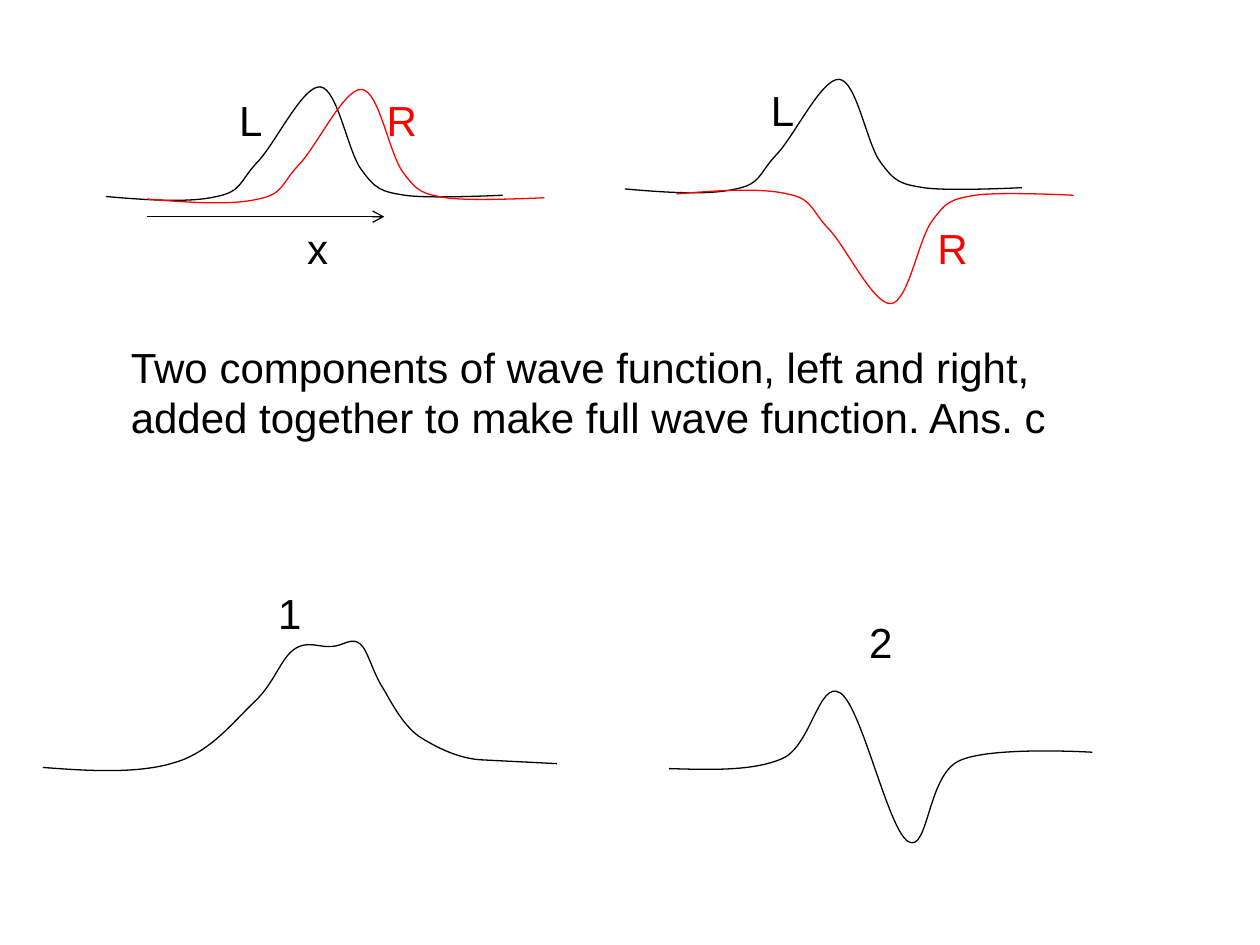
from collections import namedtuple
from dataclasses import dataclass
from math import cos, radians, sin

from pptx import Presentation
from pptx.dml.color import RGBColor
from pptx.enum.shapes import MSO_CONNECTOR
from pptx.enum.text import MSO_AUTO_SIZE
from pptx.oxml.ns import qn
from pptx.oxml.xmlchemy import OxmlElement
from pptx.util import Inches, Pt


@dataclass(frozen=True)
class Theme:
    black: RGBColor = RGBColor(0, 0, 0)
    red: RGBColor = RGBColor(255, 0, 0)
    font: str = "Arial"
    size: Pt = Pt(24)
    stroke: Pt = Pt(0.75)


THEME = Theme()
Box = namedtuple("Box", "left top width height")

PULSE_HEIGHT = 0.93
PULSE = [
    (0, 0.88), (0.34, 0.91), (0.67, 0.93), (0.88, 0.88),
    (1.08, 0.84), (1.06, 0.76), (1.2, 0.61),
    (1.34, 0.47), (1.56, 0), (1.7, 0.01),
    (1.84, 0.02), (1.92, 0.53), (2.03, 0.67),
    (2.14, 0.82), (2.18, 0.84), (2.37, 0.87),
    (2.56, 0.9), (3.15, 0.87), (3.15, 0.87),
]
FLIPPED_PULSE = [(x, PULSE_HEIGHT - y) for x, y in PULSE]
SUM_WAVE = [
    (0, 1.04), (0.38, 1.07), (0.77, 1.09), (1.05, 1),
    (1.33, 0.92), (1.52, 0.67), (1.68, 0.52),
    (1.84, 0.37), (1.89, 0.17), (2, 0.1),
    (2.1, 0.03), (2.2, 0.09), (2.29, 0.08),
    (2.38, 0.08), (2.45, 0), (2.52, 0.06),
    (2.58, 0.11), (2.62, 0.29), (2.7, 0.41),
    (2.77, 0.53), (2.85, 0.69), (2.98, 0.79),
    (3.12, 0.88), (3.3, 0.97), (3.48, 0.98),
    (3.68, 0.99), (3.88, 1), (4.08, 1.01),
]
DIFFERENCE_WAVE = [
    (0, 0.71), (0.34, 0.72), (0.67, 0.73), (0.9, 0.63),
    (1.13, 0.53), (1.19, 0), (1.36, 0.11),
    (1.53, 0.22), (1.74, 1.2), (1.9, 1.29),
    (2.06, 1.38), (2.05, 0.77), (2.3, 0.65),
    (2.54, 0.53), (3.36, 0.58), (3.36, 0.58),
]


def turn(points, center, degrees):
    angle = radians(degrees)
    turned = []
    for x, y in points:
        dx, dy = x - center[0], y - center[1]
        turned.append((center[0] + dx * cos(angle) - dy * sin(angle),
                       center[1] + dx * sin(angle) + dy * cos(angle)))
    return turned


def add_curve(page, left, top, points, color=THEME.black, rotation=0):
    spots = [(Inches(left + x), Inches(top + y)) for x, y in points]
    builder = page.shapes.build_freeform(*spots[0])
    builder.add_line_segments(spots[1:], close=False)
    curve = builder.convert_to_shape()
    outline = curve.element.find(".//" + qn("a:path"))
    segments = outline.findall(qn("a:lnTo"))
    for start in range(0, len(segments), 3):
        bezier = OxmlElement("a:cubicBezTo")
        for segment in segments[start:start + 3]:
            bezier.append(segment[0])
            outline.remove(segment)
        outline.append(bezier)
    curve.shadow.inherit = False
    curve.fill.background()
    curve.line.color.rgb = color
    curve.line.width = THEME.stroke
    curve.rotation = rotation


def add_text(page, box, lines, color=THEME.black, wrap=False):
    frame = page.shapes.add_textbox(*map(Inches, box)).text_frame
    frame.word_wrap = wrap
    frame.auto_size = MSO_AUTO_SIZE.NONE if wrap else MSO_AUTO_SIZE.SHAPE_TO_FIT_TEXT
    for index, line in enumerate(lines):
        para = frame.paragraphs[0] if index == 0 else frame.add_paragraph()
        para.text = line
        para.font.name = THEME.font
        para.font.size = THEME.size
        para.font.color.rgb = color


def add_label(page, left, top, text, color=THEME.black, width=0.39):
    add_text(page, Box(left, top, width, 0.5), [text], color)


def add_axis(page, left, top, length):
    axis = page.shapes.add_connector(
        MSO_CONNECTOR.STRAIGHT, Inches(left), Inches(top),
        Inches(left + length), Inches(top))
    axis.line.color.rgb = THEME.black
    axis.line.width = THEME.stroke
    tail = OxmlElement("a:tailEnd")
    tail.set("type", "arrow")
    axis.line._get_or_add_ln().append(tail)
    axis.element.spPr.append(OxmlElement("a:effectLst"))


def draw_in_phase(page, box):
    left, top = box.left, box.top
    add_curve(page, left, top, PULSE)
    add_curve(page, left + 0.33, top + 0.02, PULSE, THEME.red)
    add_label(page, left + 2.13, top + 0.02, "R", THEME.red, 0.45)
    add_label(page, left + 0.96, top + 0.02, "L")
    add_axis(page, left + 0.33, top + 1.04, 1.88)
    add_label(page, left + 1.5, top + 1.04, "x", width=0.37)


def draw_out_of_phase(page, box):
    left, top = box.left, box.top
    add_curve(page, left, top, PULSE)
    add_curve(page, left + 0.41, top + 0.87, FLIPPED_PULSE, THEME.red)
    add_label(page, left + 2.38, top + 1.1, "R", THEME.red, 0.45)
    add_label(page, left + 1.06, top, "L")


def draw_sum(page, box):
    tilt = -3.7
    level = turn(SUM_WAVE, (2, 0.58), -tilt)
    add_curve(page, box.left, box.top + 0.44, level, rotation=tilt)
    add_label(page, box.left + 1.77, box.top, "1")


def draw_difference(page, box):
    add_curve(page, box.left, box.top + 0.55, DIFFERENCE_WAVE)
    add_label(page, box.left + 1.49, box.top, "2")


def draw_caption(page, box):
    add_text(page, box, [
        "Two components of wave function, left and right,",
        "added together to make full wave function. Ans. c",
    ], wrap=True)


def main():
    deck = Presentation()
    deck.slide_width, deck.slide_height = Inches(10), Inches(7.5)
    page = deck.slides.add_slide(deck.slide_layouts[6])
    draw_in_phase(page, Box(0.84, 0.68, 3.48, 1.54))
    draw_out_of_phase(page, Box(4.96, 0.62, 3.56, 1.8))
    draw_caption(page, Box(0.94, 2.66, 7.54, 1.31))
    draw_sum(page, Box(0.34, 4.61, 4.08, 1.53))
    draw_difference(page, Box(5.31, 4.84, 3.36, 1.93))
    deck.save("out.pptx")


if __name__ == "__main__":
    main()
